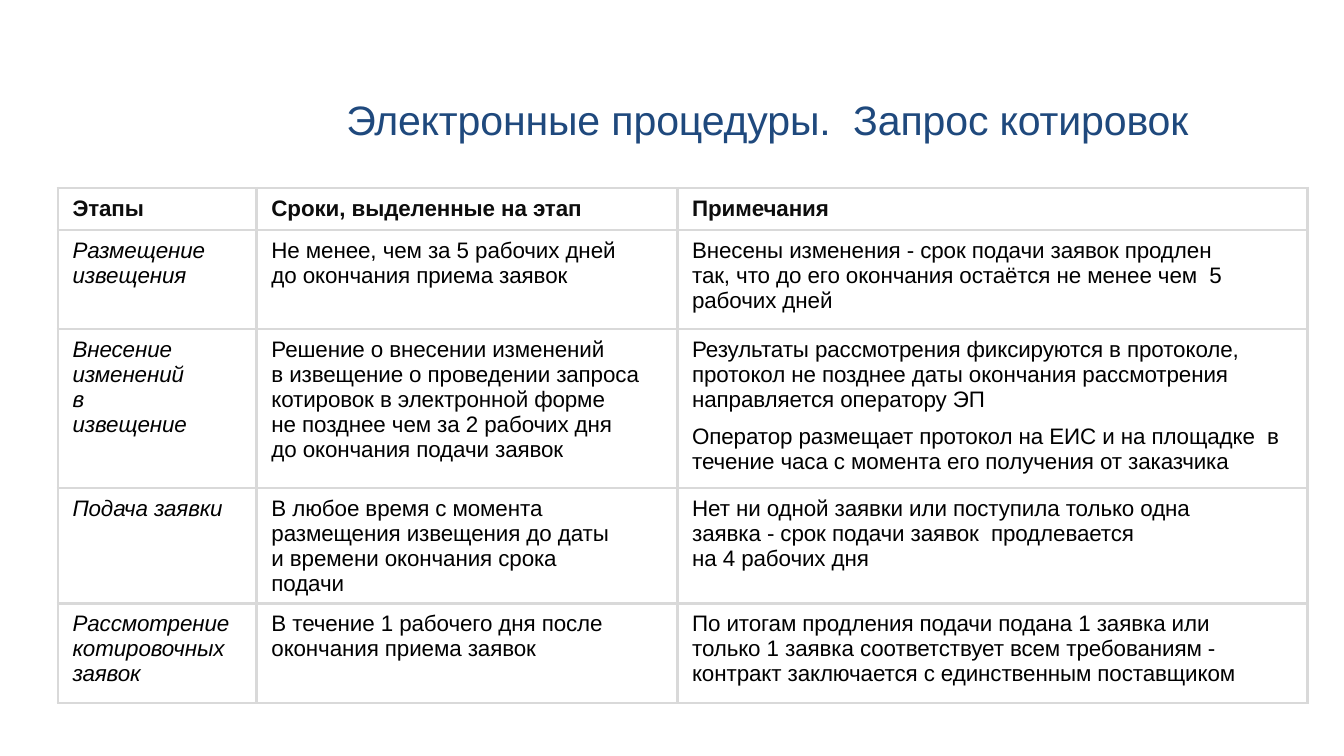
from lxml import etree
from pptx import Presentation
from pptx.dml.color import RGBColor
from pptx.enum.text import MSO_ANCHOR, PP_ALIGN
from pptx.oxml.ns import qn
from pptx.util import Inches, Pt

CENTER = PP_ALIGN.CENTER
LEFT = PP_ALIGN.LEFT
MIDDLE = MSO_ANCHOR.MIDDLE

TITLE = "Электронные процедуры.  Запрос котировок"
COLUMNS = [1.48, 3.13, 4.69]
HEIGHTS = [0.31, 0.74, 1.18, 0.74, 0.74]
ROWS = [
    ["Этапы", "Сроки, выделенные на этап", "Примечания"],
    [
        "Размещение\vизвещения",
        "Не менее, чем за 5 рабочих дней\vдо окончания приема заявок",
        "Внесены изменения - срок подачи заявок продлен\v"
        "так, что до его окончания остаётся не менее чем  5\vрабочих дней",
    ],
    [
        "Внесение\vизменений\nв\vизвещение",
        "Решение о внесении изменений\n"
        "в извещение о проведении запроса\vкотировок в электронной форме\n"
        "не позднее чем за 2 рабочих дня\n"
        "до окончания подачи заявок",
        "Результаты рассмотрения фиксируются в протоколе,\v"
        "протокол не позднее даты окончания рассмотрения\v"
        "направляется оператору ЭП\n"
        "Оператор размещает протокол на ЕИС и на площадке  в "
        "течение часа с момента его получения от заказчика",
    ],
    [
        "Подача заявки",
        "В любое время с момента\vразмещения извещения до даты\n"
        "и времени окончания срока\vподачи",
        "Нет ни одной заявки или поступила только одна\v"
        "заявка - срок подачи заявок  продлевается\n"
        "на 4 рабочих дня",
    ],
    [
        "Рассмотрение\vкотировочных\vзаявок",
        "В течение 1 рабочего дня после\vокончания приема заявок",
        "По итогам продления подачи подана 1 заявка или\v"
        "только 1 заявка соответствует всем требованиям -\v"
        "контракт заключается с единственным поставщиком",
    ],
]


def color(value):
    """Turn a hex string into a colour."""
    return RGBColor.from_string(value)


def style_text(tf, size, value, align=LEFT, bold=False, italic=False):
    """Format every paragraph of a text frame with slightly tight spacing."""
    for p in tf.paragraphs:
        p.alignment = align
        p.font.name = "Arial"
        p.font.size = Pt(size)
        p.font.bold = bold
        p.font.italic = italic
        p.font.color.rgb = color(value)
        for r in p.runs:
            r.font._element.set("spc", "-5")


def set_borders(cell, value, width):
    """Draw the same line on all four sides of a cell."""
    tcPr = cell._tc.get_or_add_tcPr()
    for side in ("a:lnL", "a:lnR", "a:lnT", "a:lnB"):
        ln = etree.SubElement(tcPr, qn(side), w=str(Pt(width)))
        fill = etree.SubElement(ln, qn("a:solidFill"))
        etree.SubElement(fill, qn("a:srgbClr"), val=value)


def add_title(s, left, top, width, height):
    """Place the centred slide title."""
    tf = s.shapes.add_textbox(
        Inches(left), Inches(top), Inches(width), Inches(height)
    ).text_frame
    tf.word_wrap = True
    tf.vertical_anchor = MIDDLE
    tf.margin_left = tf.margin_right = tf.margin_bottom = 0
    tf.margin_top = Inches(0.01)
    tf.text = TITLE
    style_text(tf, 22, "1F497D", CENTER)


def fill_cell(cell, text, header, stage):
    """Write and format one table cell."""
    cell.margin_left = Inches(0.11)
    cell.margin_top = Inches(0.06)
    cell.margin_right = cell.margin_bottom = 0
    set_borders(cell, "D9D9D9", 1.5)
    cell.fill.background()
    cell.text_frame.text = text
    style_text(
        cell.text_frame,
        12,
        "0D0D0D" if header else "000000",
        bold=header,
        italic=stage and not header,
    )


def add_stages(s, left, top):
    """Place the table of stages, deadlines and notes."""
    table = s.shapes.add_table(
        len(ROWS), len(COLUMNS), Inches(left), Inches(top),
        Inches(sum(COLUMNS)), Inches(sum(HEIGHTS)),
    ).table
    table.first_row = False
    table.horz_banding = False
    for column, width in zip(table.columns, COLUMNS):
        column.width = Inches(width)
    for row, height in zip(table.rows, HEIGHTS):
        row.height = Inches(height)
    for i, texts in enumerate(ROWS):
        for j, text in enumerate(texts):
            fill_cell(table.cell(i, j), text, i == 0, j == 0)
    table.cell(2, 2).text_frame.paragraphs[1].space_before = Pt(6)


def main():
    """Build the slide and save it."""
    prs = Presentation()
    prs.slide_width = Inches(10)
    prs.slide_height = Inches(10 * 9 / 16)
    s = prs.slides.add_slide(prs.slide_layouts[6])
    add_title(s, 2.17, 0.69, 7.08, 0.38)
    add_stages(s, 0.43, 1.4)
    prs.save("out.pptx")


if __name__ == "__main__":
    main()
